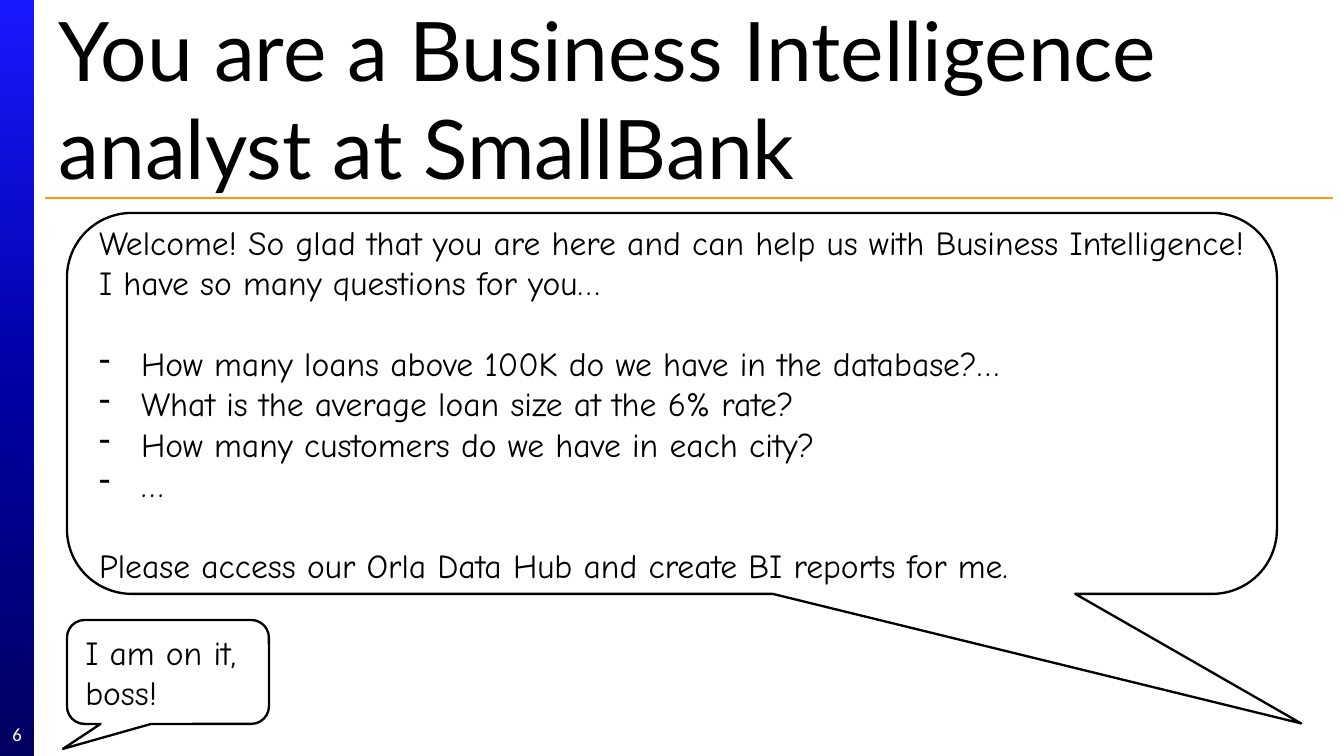
from copy import deepcopy
from dataclasses import dataclass

from lxml import etree
from pptx import Presentation
from pptx import util as u
from pptx.dml.color import RGBColor
from pptx.enum import shapes, text
from pptx.oxml import ns

PX = 914400 / 134.4  # EMU in one px


def px(n: int) -> u.Emu:
    return u.Emu(round(n * PX))


@dataclass(frozen=True)
class Theme:
    ink: str = "000000"
    paper: str = "FFFFFF"
    rule: str = "FF9900"
    bar: tuple = ((0, "1919FF"), (0.5, "0000A5"), (1, "000060"))
    head: tuple = ("Lato", 44)
    talk: tuple = ("Comic Neue", 18)
    num: tuple = ("Calibri", 10)


@dataclass(frozen=True)
class Box:
    x: int
    y: int
    w: int
    h: int

    def emu(self) -> tuple:
        return px(self.x), px(self.y), px(self.w), px(self.h)


@dataclass(frozen=True)
class Line:
    words: str
    dash: bool = False
    gap: float = 0  # points before


@dataclass(frozen=True)
class Bubble:
    box: Box
    tail: tuple
    lines: tuple


T = Theme()
GAP = 21.6  # one line of talk
WIDE, HIGH = 1344, 756

BUBBLES = (
    Bubble(Box(67, 213, 1210, 381), (0.52, 0.84, 0.17), (
        Line("Welcome! So glad that you are here and can help us with "
             "Business Intelligence! I have so many questions for you…"),
        Line("How many loans above 100K do we have in the database?…", True, GAP),
        Line("What is the average loan size at the 6% rate?", True),
        Line("How many customers do we have in each city?", True),
        Line("…", True),
        Line("Please access our Orla Data Hub and create BI reports for me.", gap=GAP),
    )),
    Bubble(Box(67, 620, 202, 104), (-0.52, 0.74, 0.17),
           (Line("I am on it, boss!"),)),
)


def rgb(code: str) -> RGBColor:
    return RGBColor.from_string(code)


def add_run(para, words: str, face: tuple, color: str) -> None:
    run = para.add_run()
    run.text = words
    run.font.name, run.font.size = face[0], u.Pt(face[1])
    run.font.color.rgb = rgb(color)


def add_dash(para) -> None:
    props = para._p.get_or_add_pPr()
    props.set("marL", str(px(42)))
    props.set("indent", str(-px(42)))
    etree.SubElement(props, ns.qn("a:buChar")).set("char", "-")


def add_bar(slide, box: Box) -> None:
    bar = slide.shapes.add_shape(shapes.MSO_SHAPE.RECTANGLE, *box.emu())
    bar.shadow.inherit = False
    bar.line.fill.background()
    bar.fill.gradient()
    bar.fill.gradient_angle = 270
    stops = bar._element.spPr.find(".//" + ns.qn("a:gsLst"))
    stops.append(deepcopy(stops[0]))
    for stop, (pos, color) in zip(bar.fill.gradient_stops, T.bar):
        stop.position = pos
        stop.color.rgb = rgb(color)


def add_rule(slide, left: int, right: int, y: int) -> None:
    rule = slide.shapes.add_connector(
        shapes.MSO_CONNECTOR.STRAIGHT, px(left), px(y), px(right), px(y))
    rule.line.color.rgb = rgb(T.rule)
    rule.line.width = u.Pt(0.75)
    etree.SubElement(rule._element.spPr, ns.qn("a:effectLst"))


def set_title(slide, box: Box, words: str) -> None:
    title = slide.shapes.title
    title.left, title.top, title.width, title.height = box.emu()
    frame = title.text_frame
    frame.auto_size = text.MSO_AUTO_SIZE.NONE
    frame.vertical_anchor = text.MSO_ANCHOR.MIDDLE
    para = frame.paragraphs[0]
    para.alignment = text.PP_ALIGN.LEFT
    add_run(para, words, T.head, T.ink)


def add_num(slide, box: Box, words: str) -> None:
    frame = slide.shapes.add_textbox(*box.emu()).text_frame
    frame.word_wrap = True
    frame.vertical_anchor = text.MSO_ANCHOR.MIDDLE
    frame.margin_left = frame.margin_right = 0
    frame.margin_top = frame.margin_bottom = 0
    para = frame.paragraphs[0]
    para.alignment = text.PP_ALIGN.CENTER
    add_run(para, words, T.num, T.paper)


def add_bubble(slide, item: Bubble) -> None:
    shape = slide.shapes.add_shape(
        shapes.MSO_SHAPE.ROUNDED_RECTANGULAR_CALLOUT, *item.box.emu())
    shape.shadow.inherit = False
    for i, value in enumerate(item.tail):
        shape.adjustments[i] = value
    shape.fill.solid()
    shape.fill.fore_color.rgb = rgb(T.paper)
    shape.line.color.rgb = rgb(T.ink)
    shape.line.width = u.Pt(1.25)
    frame = shape.text_frame
    frame.word_wrap = True
    frame.vertical_anchor = text.MSO_ANCHOR.MIDDLE
    for i, line in enumerate(item.lines):
        para = frame.add_paragraph() if i else frame.paragraphs[0]
        para.alignment = text.PP_ALIGN.LEFT
        para.space_before = u.Pt(line.gap)
        if line.dash:
            add_dash(para)
        add_run(para, line.words, T.talk, T.ink)


def main() -> None:
    deck = Presentation()
    deck.slide_width, deck.slide_height = px(WIDE), px(HIGH)
    slide = deck.slides.add_slide(deck.slide_layouts[5])

    # Frame: side bar, rule, title, page number
    add_bar(slide, Box(0, 0, 34, HIGH))
    add_rule(slide, 45, 1333, 198)
    set_title(slide, Box(45, 8, 1288, 179),
              "You are a Business Intelligence analyst at SmallBank")
    add_num(slide, Box(0, 714, 34, 40), "6")

    # Dialogue
    for item in BUBBLES:
        add_bubble(slide, item)

    deck.save("out.pptx")


if __name__ == "__main__":
    main()
